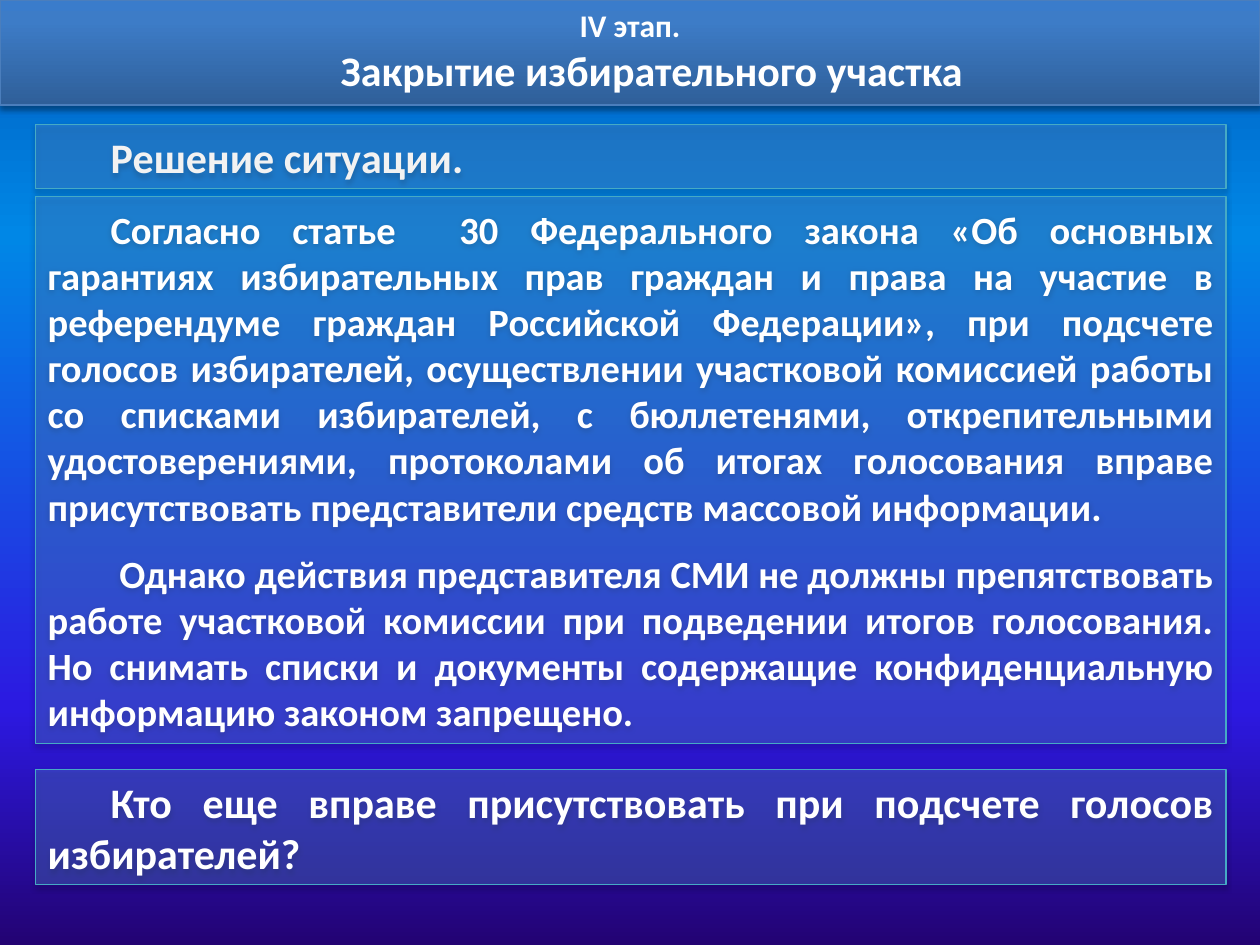
from lxml import etree
from pptx import Presentation
from pptx.dml.color import RGBColor
from pptx.enum import shapes, text
from pptx.oxml import parse_xml
from pptx.oxml.ns import nsdecls, qn
from pptx.util import Pt

COLORS = {
    "white": "FFFFFF", "off_white": "F2F2F2", "black": "000000",
    "panel": "558ED5", "panel_line": "46AAC5", "header_line": "4B7EBC",
}
BACKGROUND = [(0, "230373"), (25, "2C19E1"), (75, "0087E6"), (100, "005CBF")]
HEADER = [(0, "2F5F99"), (80, "3D7CC7"), (100, "3A7CCB")]


class SlideBuilder:
    """Holds the style and the current slide."""
    font = "Calibri"
    left, width = 20.16, 680.4
    panel_alpha = 33

    def __init__(self, slide):
        self.slide = slide

    def gradient(self, fill, stops):
        """Gradient that runs from the bottom up."""
        fill.gradient()
        fill.gradient_angle = 90
        gs_list = fill.gradient_stops[0]._gs.getparent()
        for gs in list(gs_list):
            gs_list.remove(gs)
        for pos, color in stops:
            gs = etree.SubElement(gs_list, qn("a:gs"), pos=str(pos * 1000))
            etree.SubElement(gs, qn("a:srgbClr"), val=color)

    def outline(self, sp, color):
        sp.line.color.rgb = RGBColor.from_string(COLORS[color])
        sp.line.width = Pt(0.75)
        sp._element.spPr.append(parse_xml(
            f'<a:effectLst {nsdecls("a")}><a:outerShdw blurRad="{Pt(3.1)}" dist="{Pt(1.8)}" '
            f'dir="5400000" rotWithShape="0"><a:srgbClr val="{COLORS["black"]}">'
            '<a:alpha val="35000"/></a:srgbClr></a:outerShdw></a:effectLst>'))

    def frame(self, sp, anchor):
        tf = sp.text_frame
        tf.word_wrap = True
        tf.auto_size = text.MSO_AUTO_SIZE.SHAPE_TO_FIT_TEXT
        tf.vertical_anchor = anchor
        return tf

    def paragraph(self, p, words, size, align, color="white", margin=0, indent=0, space=0):
        p.text = words
        p.alignment = align
        p.space_before = p.space_after = Pt(space)
        p.font.name = self.font
        p.font.size = Pt(size)
        p.font.bold = True
        p.font.color.rgb = RGBColor.from_string(COLORS[color])
        pPr = p._p.get_or_add_pPr()
        pPr.set("marL", str(Pt(margin)))
        pPr.set("indent", str(Pt(indent)))

    def background(self, stops):
        self.gradient(self.slide.background.fill, stops)

    def header(self, stage, title):
        sp = self.slide.shapes.title
        sp.left, sp.top, sp.width, sp.height = Pt(0), Pt(0), Pt(720), Pt(58.3)
        self.gradient(sp.fill, stops=HEADER)
        self.outline(sp, "header_line")
        tf = self.frame(sp, text.MSO_ANCHOR.TOP)
        center = text.PP_ALIGN.CENTER
        self.paragraph(tf.paragraphs[0], stage, 18, center)
        self.paragraph(tf.add_paragraph(), title, 24, center, margin=25)

    def panel(self, top, height, paragraphs, size, color="white", space=6):
        """Translucent panel; each paragraph is (words, first-line indent)."""
        sp = self.slide.shapes.add_shape(
            shapes.MSO_SHAPE.RECTANGLE, Pt(self.left), Pt(top), Pt(self.width), Pt(height))
        sp.fill.solid()
        sp.fill.fore_color.rgb = RGBColor.from_string(COLORS["panel"])
        fill_color = sp._element.spPr.find(qn("a:solidFill"))[0]
        etree.SubElement(fill_color, qn("a:alpha"), val=str(self.panel_alpha * 1000))
        self.outline(sp, "panel_line")
        tf = self.frame(sp, text.MSO_ANCHOR.MIDDLE)
        for i, (words, indent) in enumerate(paragraphs):
            p = tf.add_paragraph() if i else tf.paragraphs[0]
            self.paragraph(p, words, size, text.PP_ALIGN.JUSTIFY, color,
                           indent=indent, space=space)


def main():
    prs = Presentation()
    prs.slide_width, prs.slide_height = Pt(720), Pt(540)
    s = SlideBuilder(prs.slides.add_slide(prs.slide_layouts[5]))

    # Background and header
    s.background(BACKGROUND)
    s.header("IV этап.", "Закрытие избирательного участка")

    # Answer: heading and explanation
    s.panel(71.3, 36.3, [("Решение ситуации.", 36)], 24, "off_white", space=0)
    s.panel(112.3, 312.6, [
        ("Согласно статье  30 Федерального закона «Об основных гарантиях избирательных "
         "прав граждан и права на участие в референдуме граждан Российской Федерации», "
         "при подсчете голосов избирателей, осуществлении участковой комиссией работы "
         "со списками избирателей, с бюллетенями, открепительными удостоверениями, "
         "протоколами об итогах голосования вправе присутствовать представители "
         "средств массовой информации.", 36),
        ("Однако действия представителя СМИ не должны препятствовать работе участковой "
         "комиссии при подведении итогов голосования. Но снимать списки и документы "
         "содержащие конфиденциальную информацию законом запрещено.", 41),
    ], 22)

    # Follow-up question
    s.panel(439.9, 65.5, [
        ("Кто еще вправе присутствовать при подсчете голосов избирателей?", 36)], 24)

    prs.save("out.pptx")


if __name__ == "__main__":
    main()
